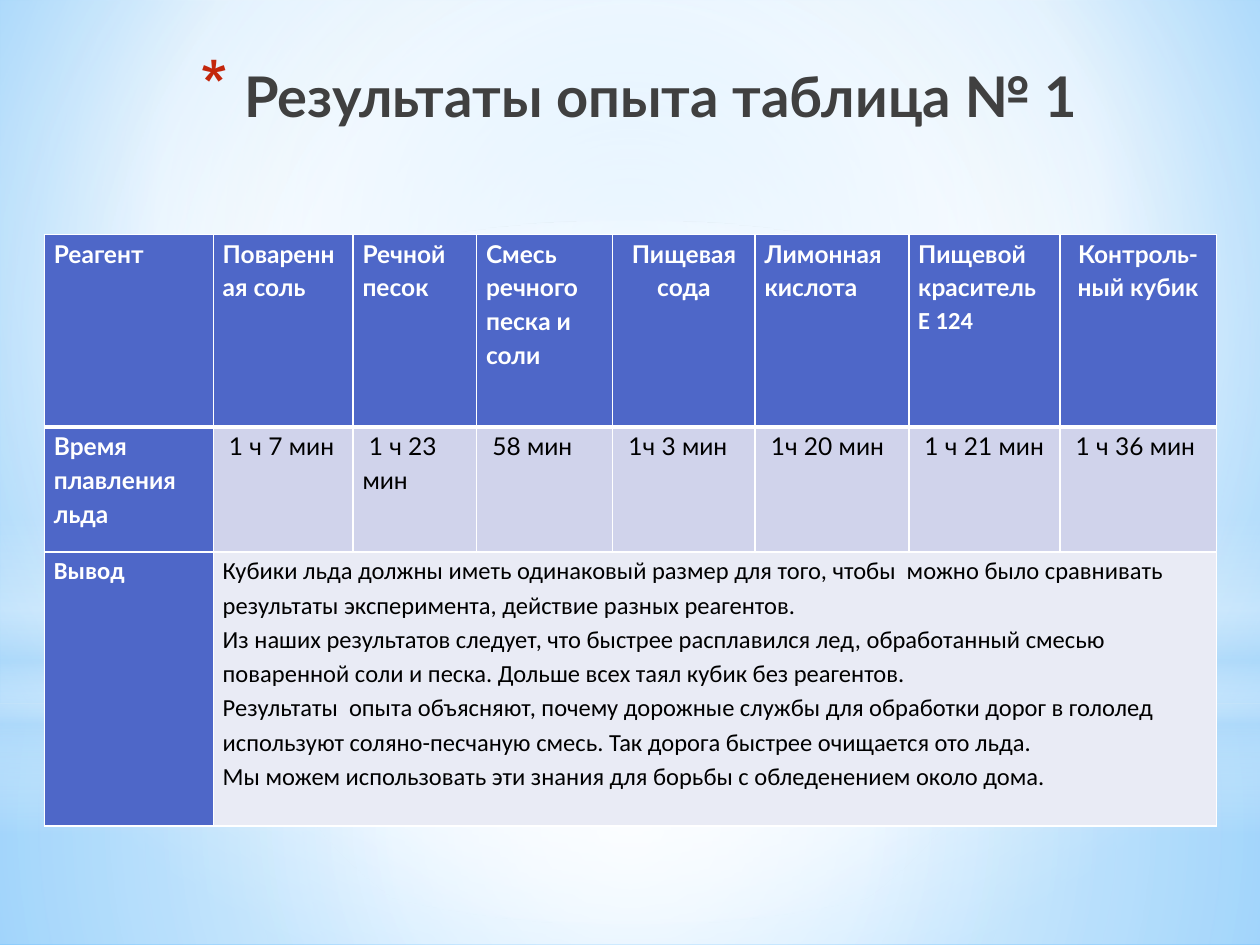
from lxml import etree
from pptx import Presentation
from pptx import util as u
from pptx.dml.color import RGBColor
from pptx.enum import shapes, text
from pptx.oxml import ns

HUES = {"white": "FFFFFF", "black": "000000", "head": "4E67C8", "cell": "D0D3EB",
        "pale": "E9EBF5", "title": "404040", "star": "C3260C",
        "sky": "B4DCFA", "light": "9ED5FF", "deep": "5BB9FF"}
MID = (50, 50, 50, 50)
WIDTHS = (96.5, 79.9, 70.6, 77.8, 81.4, 87.8, 86.4, 89.3)
HEIGHTS = (110, 71.5, 156.5)
HEADS = ("Реагент", "Поваренная соль", "Речной песок", "Смесь речного песка и соли",
         "Пищевая сода", "Лимонная кислота", "Пищевой краситель\nЕ 124",
         "Контроль-ный кубик")
TIMES = ("Время плавления льда", " 1 ч 7 мин", " 1 ч 23 мин", " 58 мин", " 1ч 3 мин",
         " 1ч 20 мин", " 1 ч 21 мин", " 1 ч 36 мин")
NOTES = "\n".join((
    "Кубики льда должны иметь одинаковый размер для того, чтобы  можно было сравнивать "
    "результаты эксперимента, действие разных реагентов.",
    "Из наших результатов следует, что быстрее расплавился лед, обработанный смесью "
    "поваренной соли и песка. Дольше всех таял кубик без реагентов.",
    "Результаты  опыта объясняют, почему дорожные службы для обработки дорог в гололед "
    "используют соляно-песчаную смесь. Так дорога быстрее очищается ото льда.",
    "Мы можем использовать эти знания для борьбы с обледенением около дома."))


def sub(node, tag, **attrs):
    return etree.SubElement(node, ns.qn("a:" + tag), {k: str(v) for k, v in attrs.items()})


def put(frame, words, size=14, hue="black", bold=False, font="Lato", mid=False, gap=None):
    frame.word_wrap = True
    for i, line in enumerate(words.split("\n")):
        para = frame.paragraphs[0] if i == 0 else frame.add_paragraph()
        para.alignment = text.PP_ALIGN.CENTER if mid else text.PP_ALIGN.LEFT
        para.line_spacing = gap
        run = para.add_run()
        run.text = line
        run.font.size, run.font.bold, run.font.name = u.Pt(size), bold, font
        run.font.color.rgb = RGBColor.from_string(HUES[hue])


class Deck:
    """Style and current slide, with a method for each kind of element."""

    def __init__(self, wide, high):
        self.prs = Presentation()
        self.prs.slide_width, self.prs.slide_height = u.Pt(wide), u.Pt(high)
        self.page = self.prs.slides.add_slide(self.prs.slide_layouts[6])

    def blend(self, fill, node, stops, focus=None):
        fill.gradient()
        grad = next(node.iter(ns.qn("a:gradFill")))
        for kid in list(grad):
            grad.remove(kid)
        row = sub(grad, "gsLst")
        for pos, hue, solid in stops:
            tint = sub(sub(row, "gs", pos=pos * 1000), "srgbClr", val=HUES[hue])
            if solid < 100:
                sub(tint, "alpha", val=solid * 1000)
        if focus:
            sides = {k: v * 1000 for k, v in zip("ltrb", focus)}
            sub(sub(grad, "path", path="circle"), "fillToRect", **sides)
        else:
            sub(grad, "lin", ang=90 * 60000, scaled=0)

    def back(self, stops, focus):
        self.blend(self.page.background.fill, self.page._element, stops, focus)

    def glow(self, kind, box, stops, focus=None):
        shape = self.page.shapes.add_shape(kind, *map(u.Pt, box))
        shape.shadow.inherit = False
        shape.line.fill.background()
        self.blend(shape.fill, shape._element, stops, focus)

    def title(self, words, box):
        frame = self.page.shapes.add_textbox(*map(u.Pt, box)).text_frame
        put(frame, words, size=32, hue="title", bold=True, mid=True)
        props = frame.paragraphs[0]._p.get_or_add_pPr()
        props.set("marL", str(u.Pt(25)))
        props.set("indent", str(-u.Pt(25)))
        sub(sub(props, "buClr"), "srgbClr", val=HUES["star"])
        sub(props, "buSzPct", val=128000)
        sub(props, "buChar", char="*")

    def grid(self, left, top, widths, heights):
        size = (left, top, sum(widths), sum(heights))
        table = self.page.shapes.add_table(len(heights), len(widths), *map(u.Pt, size)).table
        table.first_row = table.horz_banding = False
        for col, wide in zip(table.columns, widths):
            col.width = u.Pt(wide)
        for row, high in zip(table.rows, heights):
            row.height = u.Pt(high)
        return table

    def cell(self, cell, words, fill, top=1, low=1, **fmt):
        cell.margin_left = cell.margin_right = u.Pt(5.4)
        cell.margin_top = cell.margin_bottom = 0
        cell.fill.solid()
        cell.fill.fore_color.rgb = RGBColor.from_string(HUES[fill])
        props = cell._tc.get_or_add_tcPr()
        for i, (side, wide) in enumerate(zip("LRTB", (1, 1, top, low))):
            edge = sub(props, "ln" + side, w=u.Pt(wide))
            sub(sub(edge, "solidFill"), "srgbClr", val=HUES["white"])
            props.insert(i, edge)
        if words:
            put(cell.text_frame, words, gap=1.15, **fmt)


def main():
    deck = Deck(720, 540)
    rect, oval = shapes.MSO_SHAPE.RECTANGLE, shapes.MSO_SHAPE.OVAL
    deck.back([(0, "light", 100), (60, "white", 100), (100, "deep", 100)], (20, 10, 20, 60))
    deck.glow(rect, (0, 402, 720, 138),
              [(0, "white", 91), (37, "white", 76), (100, "sky", 79)], MID)
    deck.glow(rect, (0, 0, 720, 402),
              [(0, "white", 89), (48, "white", 62), (100, "sky", 79)], MID)
    deck.glow(rect, (0, 296.5, 720, 180),
              [(0, "white", 0), (29, "white", 30), (45, "sky", 40),
               (55, "white", 26), (65, "sky", 60), (100, "white", 0)])
    deck.glow(oval, (0, 126, 720, 402), [(0, "white", 100), (56, "white", 0)], MID)
    deck.title("Результаты опыта таблица № 1", (82, 31.7, 566.6, 62.6))

    table = deck.grid(25.4, 134, WIDTHS, HEIGHTS)
    lead = {"hue": "white", "bold": True}
    for c, (head, time) in enumerate(zip(HEADS, TIMES)):
        deck.cell(table.cell(0, c), head, "head", low=3, mid=c in (4, 7), **lead)
        deck.cell(table.cell(1, c), time, "cell" if c else "head", top=3,
                  **({} if c else lead))
        if c > 1:
            deck.cell(table.cell(2, c), "", "pale")
    table.cell(0, 6).text_frame.paragraphs[1].runs[0].font.name = "Calibri"
    deck.cell(table.cell(2, 0), "Вывод", "head", font="Calibri", **lead)
    deck.cell(table.cell(2, 1), NOTES, "pale", font="Calibri")
    table.cell(2, 1).merge(table.cell(2, 7))
    deck.prs.save("out.pptx")


if __name__ == "__main__":
    main()
